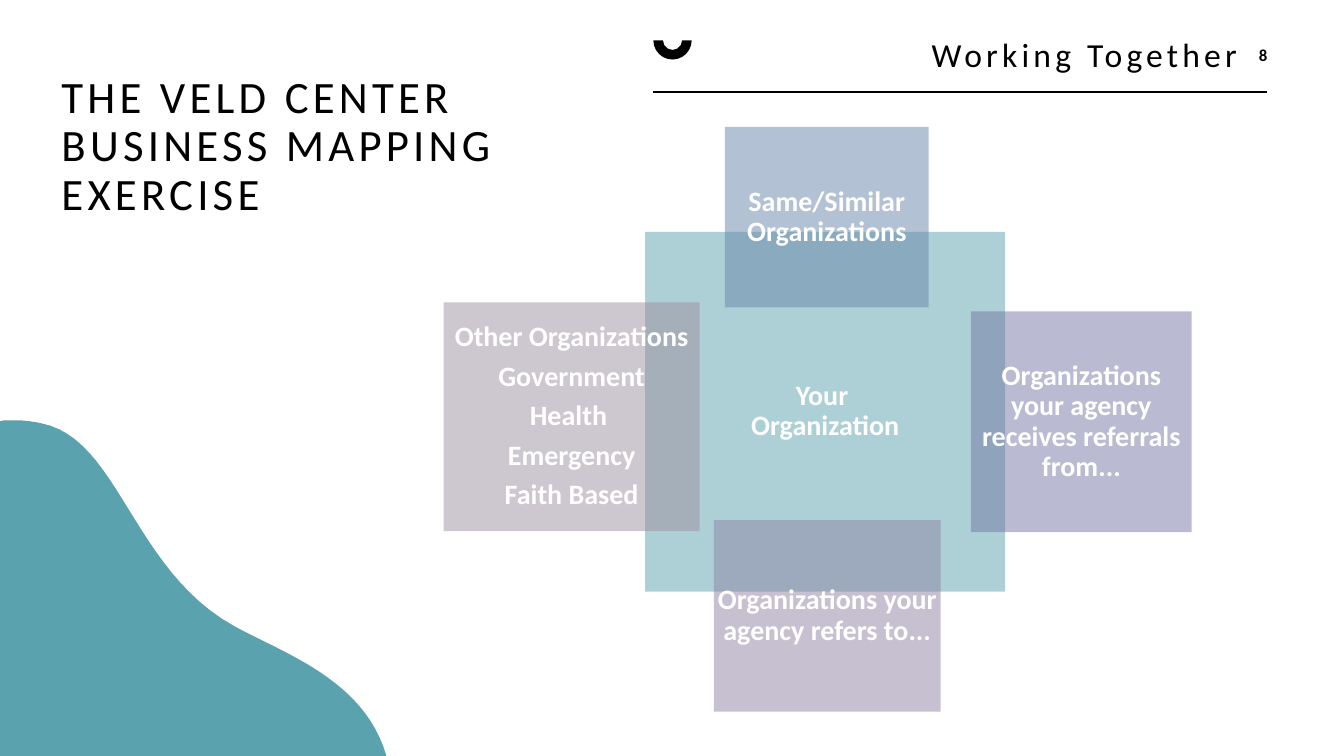
"""Build the business mapping exercise slide."""
from dataclasses import dataclass

from lxml.etree import SubElement
from pptx import Presentation
from pptx.dml.color import RGBColor
from pptx.enum.shapes import MSO_CONNECTOR, MSO_SHAPE
from pptx.enum.text import MSO_ANCHOR, MSO_AUTO_SIZE, PP_ALIGN
from pptx.oxml.ns import qn
from pptx.util import Pt

PX = 9144


@dataclass(frozen=True)
class Theme:
    """Colours and type sizes of the slide."""
    font: str = "Calibri"
    ink: str = "000000"
    light: str = "FFFFFF"
    teal: str = "5AA2AE"
    blue: str = "6885AA"
    indigo: str = "7677A6"
    violet: str = "9083A3"
    mauve: str = "9D90A0"
    title_size: int = 32
    topic_size: int = 24
    map_size: int = 20
    number_size: int = 12


THEME = Theme()
MAP_CELLS = [
    ((200, 104, 357, 357), THEME.teal, ["Your \nOrganization"]),
    ((279, 0, 202, 179), THEME.blue, ["Same/Similar Organizations"]),
    ((523, 183, 219, 219), THEME.indigo,
     ["Organizations your agency receives referrals from..."]),
    ((268, 390, 225, 190), THEME.violet, ["Organizations your agency refers to..."]),
    ((0, 174, 254, 227), THEME.mauve,
     ["Other Organizations", "Government", "Health ", "Emergency", "Faith Based"]),
]
HILL_CURVES = [
    [(15, 0), (23, 0), (32, 1), (41, 3)],
    [(41, 3), (118, 18), (131, 148), (232, 204)],
    [(232, 204), (281, 231), (361, 257), (383, 332)],
]
HILL_CORNERS = [(383, 333), (0, 333), (0, 1), (4, 0)]


def emu(*lengths):
    """Turn px lengths into EMU."""
    return [length * PX for length in lengths]


def apply(target, values):
    """Set each named attribute on the target."""
    for name, value in values.items():
        setattr(target, name, value)


def paint(shape, color, opacity=100):
    """Give a shape a flat fill without outline or shadow."""
    shape.shadow.inherit = False
    shape.fill.solid()
    shape.fill.fore_color.rgb = RGBColor.from_string(color)
    shape.line.fill.background()
    if opacity < 100:
        color_element = shape.fill._xPr.find(qn("a:solidFill"))[0]
        SubElement(color_element, qn("a:alpha"), val=str(opacity * 1000))


def write(shape, paragraphs, size, color, insets, anchor, layout, bold=False, tracking=0):
    """Fill a shape with formatted paragraphs."""
    frame = shape.text_frame
    sides = ("margin_left", "margin_top", "margin_right", "margin_bottom")
    apply(frame, {"word_wrap": True, "auto_size": MSO_AUTO_SIZE.NONE,
                  "vertical_anchor": anchor, **dict(zip(sides, emu(*insets)))})
    for index, text in enumerate(paragraphs):
        paragraph = frame.add_paragraph() if index else frame.paragraphs[0]
        apply(paragraph, layout)
        for row, line in enumerate(text.split("\n")):
            if row:
                paragraph.add_line_break()
            run = paragraph.add_run()
            run.text = line
            apply(run.font, {"name": THEME.font, "size": Pt(size), "bold": bold})
            run.font.color.rgb = RGBColor.from_string(color)
            if tracking:
                run.font._element.set("spc", str(tracking * 100))


def curve_points(start, first, second, end, steps=24):
    """Return points along a cubic curve, without its start."""
    points = []
    for step in range(1, steps + 1):
        t = step / steps
        weights = ((1 - t) ** 3, 3 * t * (1 - t) ** 2, 3 * t ** 2 * (1 - t), t ** 3)
        points.append(tuple(
            sum(weight * value for weight, value in zip(weights, values))
            for values in zip(start, first, second, end)))
    return points


def add_hill(slide, box):
    """Draw the rounded hill in the lower left corner."""
    left, top = box[:2]
    outline = [point for curve in HILL_CURVES for point in curve_points(*curve)]
    points = [((left + x) * PX, (top + y) * PX) for x, y in outline + HILL_CORNERS]
    start_x, start_y = HILL_CURVES[0][0]
    builder = slide.shapes.build_freeform(*emu(left + start_x, top + start_y))
    builder.add_line_segments(points, close=True)
    paint(builder.convert_to_shape(), THEME.teal)


def add_header(slide, box):
    """Draw the arc, topic, page number and rule at the top right."""
    left, top, width, height = box
    right, bottom = left + width, top + height
    rule = slide.shapes.add_connector(
        MSO_CONNECTOR.STRAIGHT, *emu(left, bottom, right, bottom))
    rule.line.width = Pt(1.5)
    rule.line.color.rgb = RGBColor.from_string(THEME.ink)
    SubElement(rule._element.spPr, qn("a:effectLst"))

    arc = slide.shapes.add_shape(MSO_SHAPE.BLOCK_ARC, *emu(left, top + 4, 38, 38))
    arc.rotation = 180
    paint(arc, THEME.ink)

    layout = {"alignment": PP_ALIGN.RIGHT, "space_after": Pt(6)}
    number = slide.shapes.add_textbox(*emu(right - 38, top, 38, 52))
    write(number, ["8"], THEME.number_size, THEME.ink, (0, 5, 0, 5),
          MSO_ANCHOR.BOTTOM, layout, bold=True)
    topic = slide.shapes.add_textbox(*emu(right - 475, top + 10, 455, 52))
    write(topic, ["Working Together"], THEME.topic_size, THEME.ink, (0, 5, 10, 5),
          MSO_ANCHOR.BOTTOM, layout, tracking=3)


def add_title(slide, box):
    """Place and format the title placeholder."""
    title = slide.shapes.title
    apply(title, dict(zip(("left", "top", "width", "height"), emu(*box))))
    write(title, ["THE VELD CENTER\nBUSINESS MAPPING EXERCISE"], THEME.title_size,
          THEME.ink, (0, 5, 10, 5), MSO_ANCHOR.TOP,
          {"alignment": PP_ALIGN.LEFT, "line_spacing": 0.9}, tracking=3)


def add_organization_map(slide, box):
    """Draw the overlapping squares around the central organization."""
    left, top = box[:2]
    layout = {"alignment": PP_ALIGN.CENTER, "line_spacing": 0.9, "space_after": Pt(6.6)}
    for (x, y, width, height), color, paragraphs in MAP_CELLS:
        cell = slide.shapes.add_shape(
            MSO_SHAPE.RECTANGLE, *emu(left + x, top + y, width, height))
        paint(cell, color, opacity=50)
        write(cell, paragraphs, THEME.map_size, THEME.light, (3, 3, 3, 3),
              MSO_ANCHOR.MIDDLE, layout, bold=True)


def main():
    """Assemble and save the presentation."""
    presentation = Presentation()
    presentation.slide_width, presentation.slide_height = emu(1333, 750)
    slide = presentation.slides.add_slide(presentation.slide_layouts[5])
    add_hill(slide, (0, 417, 383, 333))
    add_header(slide, (648, 17, 609, 74))
    add_title(slide, (61, 69, 545, 198))
    add_organization_map(slide, (440, 126, 742, 580))
    presentation.save("out.pptx")


if __name__ == "__main__":
    main()
